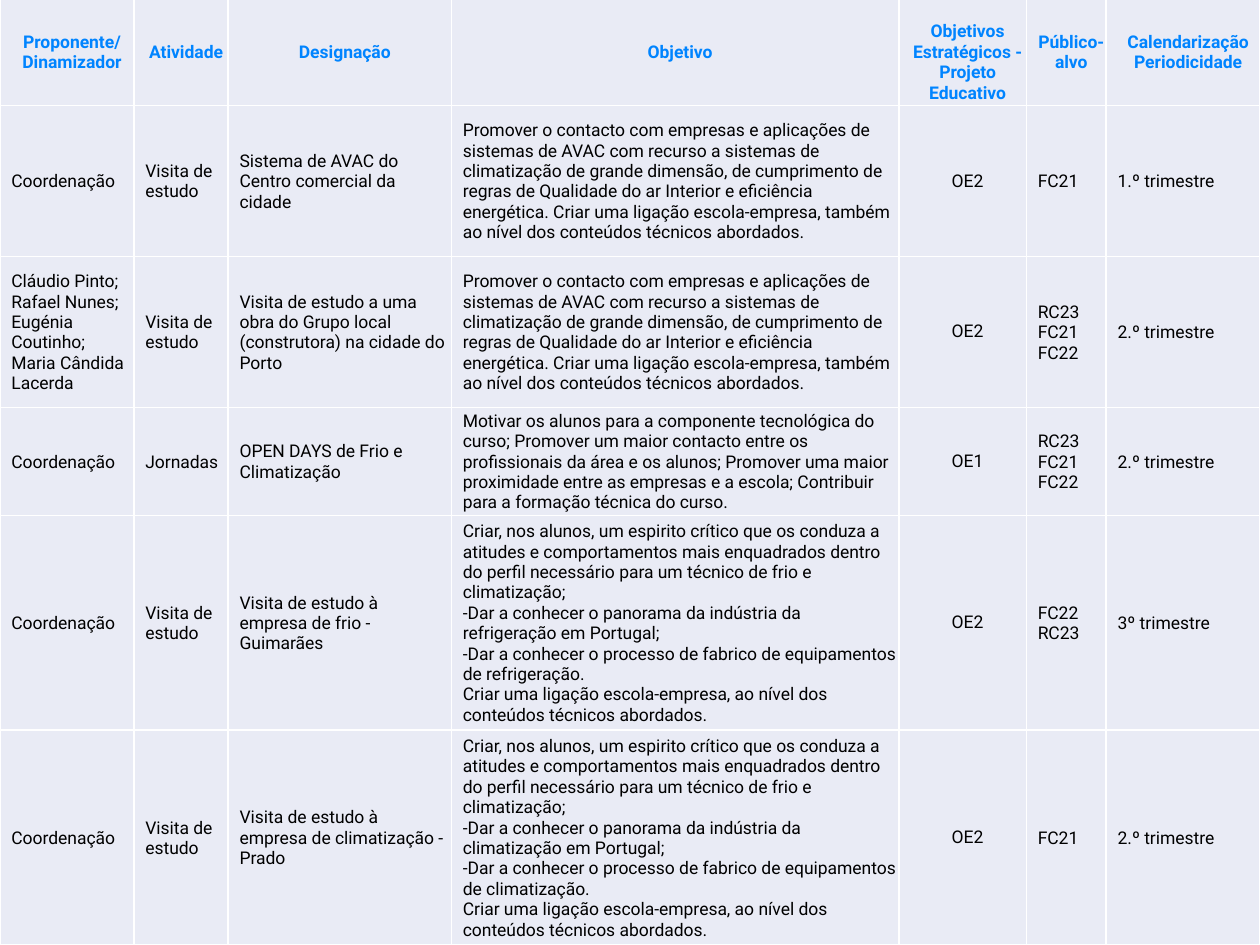
from dataclasses import dataclass

import pptx
import pptx.dml.color
import pptx.enum.text
import pptx.oxml
import pptx.oxml.ns
import pptx.util

Cm = pptx.util.Cm
Pt = pptx.util.Pt
RGBColor = pptx.dml.color.RGBColor
PP_ALIGN = pptx.enum.text.PP_ALIGN


@dataclass(frozen=True)
class Theme:
    font: str = "Roboto"
    size: int = 10
    header: str = "0084FF"
    text: str = "000000"
    fill: str = "E9EBF5"
    border: str = "FFFFFF"
    border_width: int = 1


THEME = Theme()

COL_WIDTHS = [2.7, 1.9, 4.5, 9.02, 2.57, 1.61, 3.1]
ROW_HEIGHTS = [2.15, 3.04, 3.04, 2.18, 4.33, 4.33]
STRATEGIC_COL = 4

HEADERS = [
    "Proponente/ Dinamizador", "Atividade", "Designação", "Objetivo",
    "Objetivos Estratégicos - Projeto Educativo", "Público-alvo",
    "Calendarização Periodicidade",
]

VISIT_GOAL = (
    "Promover o contacto com empresas e aplicações de sistemas de AVAC com "
    "recurso a sistemas de climatização de grande dimensão, de cumprimento de "
    "regras de Qualidade do ar Interior e eficiência energética. Criar uma "
    "ligação escola-empresa, também ao nível dos conteúdos técnicos abordados."
)
OPEN_DAYS_GOAL = (
    "Motivar os alunos para a componente tecnológica do curso; Promover um "
    "maior contacto entre os profissionais da área e os alunos; Promover uma "
    "maior proximidade entre as empresas e a escola; Contribuir para a "
    "formação técnica do curso."
)


def company_goal(field):
    """Objective of a company visit; \\v is a line break inside a paragraph."""
    return "\v".join([
        "Criar, nos alunos, um espirito crítico que os conduza a atitudes e "
        "comportamentos mais enquadrados dentro do perfil necessário para um "
        "técnico de frio e climatização;",
        f"-Dar a conhecer o panorama da indústria da {field} em Portugal;",
        f"-Dar a conhecer o processo de fabrico de equipamentos de {field}.",
        "Criar uma ligação escola-empresa, ao nível dos conteúdos técnicos "
        "abordados.",
    ])


ACTIVITIES = [
    ["Coordenação", "Visita de estudo",
     "Sistema de AVAC do Centro comercial da cidade",
     VISIT_GOAL, "OE2", "FC21", "1.º trimestre"],
    ["Cláudio Pinto; Rafael Nunes; Eugénia Coutinho; Maria Cândida Lacerda",
     "Visita de estudo",
     "Visita de estudo a uma obra do Grupo local (construtora) na cidade do Porto",
     VISIT_GOAL, "OE2", "RC23 FC21 FC22", "2.º trimestre"],
    ["Coordenação", "Jornadas", "OPEN DAYS de Frio e Climatização",
     OPEN_DAYS_GOAL, "OE1", "RC23 FC21 FC22", "2.º trimestre"],
    ["Coordenação", "Visita de estudo",
     "Visita de estudo à empresa de frio - Guimarães",
     company_goal("refrigeração"), "OE2", "FC22\nRC23", "3º trimestre"],
    ["Coordenação", "Visita de estudo",
     "Visita de estudo à empresa de climatização - Prado",
     company_goal("climatização"), "OE2", "FC21", "2.º trimestre"],
]


def add_borders(cell):
    tcPr = cell._tc.get_or_add_tcPr()
    for side in ("lnL", "lnR", "lnT", "lnB"):
        tcPr.append(pptx.oxml.parse_xml(
            f'<a:{side} {pptx.oxml.ns.nsdecls("a")} w="{Pt(THEME.border_width)}">'
            f'<a:solidFill><a:srgbClr val="{THEME.border}"/></a:solidFill>'
            f'</a:{side}>'))


def fill_cell(cell, text, color, bold=False, centred=False):
    add_borders(cell)
    cell.fill.solid()
    cell.fill.fore_color.rgb = RGBColor.from_string(THEME.fill)
    cell.vertical_anchor = pptx.enum.text.MSO_ANCHOR.MIDDLE
    margin = Cm(0 if centred else 0.03)
    cell.margin_left = cell.margin_right = cell.margin_top = margin
    cell.margin_bottom = 0
    cell.text_frame.text = text
    for p in cell.text_frame.paragraphs:
        p.alignment = PP_ALIGN.CENTER if centred else PP_ALIGN.LEFT
        p._p.get_or_add_pPr().set("marL", str(Cm(0.2)))
        for r in p.runs:
            r.font.name = THEME.font
            r.font.size = Pt(THEME.size)
            r.font.bold = bold
            r.font.color.rgb = RGBColor.from_string(color)


def add_activity_table(s, left, top, width, height):
    table = s.shapes.add_table(
        len(ROW_HEIGHTS), len(COL_WIDTHS), left, top, width, height).table
    table.first_row = table.horz_banding = False
    for col, w in zip(table.columns, COL_WIDTHS):
        col.width = Cm(w)
    for row, h in zip(table.rows, ROW_HEIGHTS):
        row.height = Cm(h)

    for c, text in enumerate(HEADERS):
        fill_cell(table.cell(0, c), text, THEME.header, bold=True, centred=True)
    # The four-line heading sits one line lower than the others
    table.cell(0, STRATEGIC_COL).margin_top = Cm(0.41)

    for r, activity in enumerate(ACTIVITIES, start=1):
        for c, text in enumerate(activity):
            fill_cell(table.cell(r, c), text, THEME.text,
                      centred=c == STRATEGIC_COL)


def main():
    prs = pptx.Presentation()
    prs.slide_width, prs.slide_height = Cm(25.4), Cm(19.05)
    s = prs.slides.add_slide(prs.slide_layouts[6])
    add_activity_table(s, 0, Cm(-0.02), prs.slide_width, Cm(sum(ROW_HEIGHTS)))
    prs.save("out.pptx")


if __name__ == "__main__":
    main()
